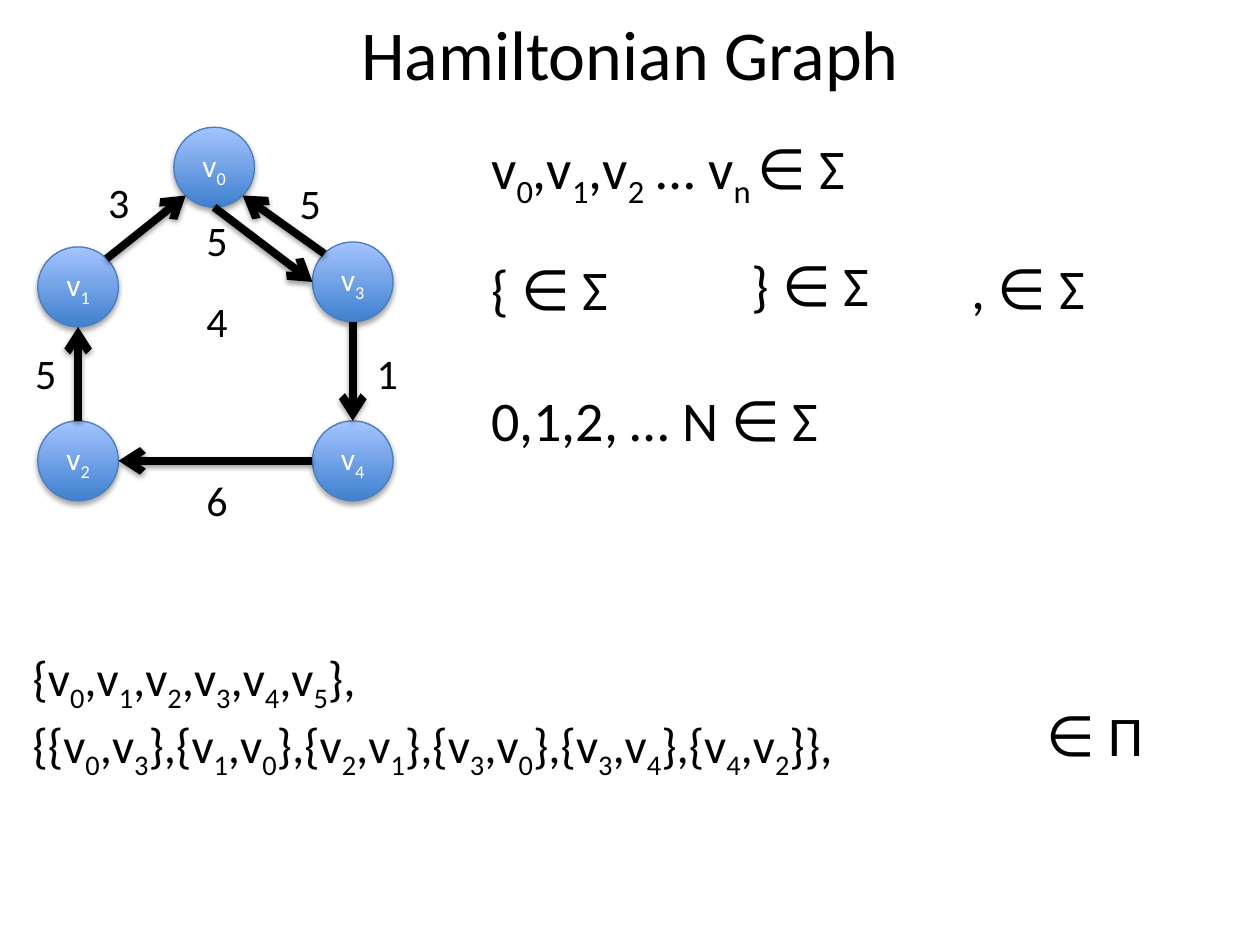
"""Build the Hamiltonian Graph slide: a weighted directed graph and its alphabet."""
from dataclasses import dataclass
from math import cos, radians, sin

from lxml import etree
from pptx import Presentation
from pptx.dml.color import RGBColor
from pptx.enum.shapes import MSO_CONNECTOR, MSO_SHAPE
from pptx.enum.text import MSO_ANCHOR, MSO_AUTO_SIZE, PP_ALIGN
from pptx.oxml.ns import qn
from pptx.util import Inches, Pt

CENTER, LEFT = PP_ALIGN.CENTER, PP_ALIGN.LEFT
MIDDLE = MSO_ANCHOR.MIDDLE
FIT_SHAPE = MSO_AUTO_SIZE.SHAPE_TO_FIT_TEXT
OVAL = MSO_SHAPE.OVAL
STRAIGHT = MSO_CONNECTOR.STRAIGHT

BLACK = RGBColor(0x00, 0x00, 0x00)
WHITE = RGBColor(0xFF, 0xFF, 0xFF)
DEEP_BLUE = RGBColor(0x3F, 0x80, 0xCE)
PALE_BLUE = RGBColor(0xA4, 0xC4, 0xFF)
OUTLINE_BLUE = RGBColor(0x4B, 0x7E, 0xBC)

FONT = "Calibri"
NODE_WIDTH, NODE_HEIGHT = 0.64, 0.635
TOP, TOP_LEFT, SIDE_LEFT, BOTTOM_LEFT, BOTTOM, BOTTOM_RIGHT, SIDE_RIGHT, TOP_RIGHT = range(8)


@dataclass(frozen=True)
class Node:
    name: str
    left: float
    top: float

    def site(self, index: int) -> tuple[float, float]:
        angle = radians(90 + 45 * index)
        return (self.left + NODE_WIDTH / 2 * (1 + cos(angle)),
                self.top + NODE_HEIGHT / 2 * (1 - sin(angle)))


@dataclass(frozen=True)
class Edge:
    source: str
    source_site: int
    target: str
    target_site: int


@dataclass(frozen=True)
class Label:
    text: str
    left: float
    top: float
    width: float
    height: float = 0.64
    size: int = 32


NODES = (
    Node("1", 0.3, 1.96),
    Node("0", 1.38, 1.01),
    Node("2", 0.3, 3.34),
    Node("3", 2.48, 1.92),
    Node("4", 2.48, 3.34),
)
EDGES = (
    Edge("0", BOTTOM, "3", SIDE_LEFT),
    Edge("3", BOTTOM, "4", TOP),
    Edge("3", TOP_LEFT, "0", BOTTOM_RIGHT),
    Edge("4", SIDE_LEFT, "2", SIDE_RIGHT),
    Edge("2", TOP, "1", BOTTOM),
    Edge("1", TOP_RIGHT, "0", BOTTOM_LEFT),
)
WEIGHTS = (
    ("3", 0.76, 1.35), ("5", 2.28, 1.36), ("4", 1.54, 2.3), ("5", 0.18, 2.71),
    ("1", 2.89, 2.71), ("6", 1.54, 3.72), ("5", 1.54, 1.65),
)


def braces(*members: str) -> str:
    return "{" + ",".join(members) + "}"


def vertices(indices: str) -> str:
    return braces(*(f"v_{index}_" for index in indices))


VERTEX_SET = vertices("012345")
EDGE_SET = braces(*map(vertices, ("03", "10", "21", "30", "34", "42")))
LABELS = (
    Label("v_0_,v_1_,v_2_ … v_n _∈ Σ", 3.8, 1.01, 3.56),
    Label("{ ∈ Σ", 3.8, 1.97, 1.2),
    Label("0,1,2, … N ∈ Σ", 3.8, 3.01, 3.19),
    Label("} ∈ Σ", 5.87, 1.94, 1.2),
    Label(", ∈ Σ", 7.61, 1.96, 1.2),
    Label(f"{VERTEX_SET},\n{EDGE_SET},", 0.16, 5.09, 7.45, 1.04, 28),
    Label("∈ Π", 8.21, 5.51, 0.97),
)


def write_text(frame, text: str, *, size: int, color: RGBColor = BLACK, align=LEFT) -> None:
    for number, line in enumerate(text.split("\n")):
        paragraph = frame.add_paragraph() if number else frame.paragraphs[0]
        paragraph.alignment = align
        for position, part in enumerate(line.split("_")):
            if not part:
                continue
            run = paragraph.add_run()
            run.text = part
            run.font.name = FONT
            run.font.size = Pt(size)
            run.font.color.rgb = color
            if position % 2:
                run._r.get_or_add_rPr().set("baseline", "-25000")


def add_shadow(properties, distance: float, opacity: int) -> None:
    effects = etree.SubElement(properties, qn("a:effectLst"))
    shadow = etree.SubElement(effects, qn("a:outerShdw"), blurRad=str(Pt(3.1)),
                              dist=str(Pt(distance)), dir="5400000", rotWithShape="0")
    color = etree.SubElement(shadow, qn("a:srgbClr"), val=str(BLACK))
    etree.SubElement(color, qn("a:alpha"), val=str(opacity * 1000))


def add_label(shapes, label: Label) -> None:
    box = shapes.add_textbox(Inches(label.left), Inches(label.top),
                             Inches(label.width), Inches(label.height))
    box.text_frame.word_wrap = False
    box.text_frame.auto_size = FIT_SHAPE
    write_text(box.text_frame, label.text, size=label.size)


def add_node(shapes, node: Node):
    circle = shapes.add_shape(OVAL, Inches(node.left), Inches(node.top),
                              Inches(NODE_WIDTH), Inches(NODE_HEIGHT))
    circle.fill.gradient()
    circle.fill.gradient_angle = 90
    for stop, color in zip(circle.fill.gradient_stops, (DEEP_BLUE, PALE_BLUE)):
        stop.color.rgb = color
    circle.line.color.rgb = OUTLINE_BLUE
    circle.line.width = Pt(0.75)
    add_shadow(circle._element.spPr, 1.8, 35)
    circle.text_frame.vertical_anchor = MIDDLE
    write_text(circle.text_frame, f"v_{node.name}_", size=18, color=WHITE, align=CENTER)
    return circle


def add_edge(shapes, edge: Edge, nodes: dict, circles: dict) -> None:
    start = nodes[edge.source].site(edge.source_site)
    end = nodes[edge.target].site(edge.target_site)
    arrow = shapes.add_connector(STRAIGHT, *map(Inches, start + end))
    arrow.line.color.rgb = BLACK
    arrow.line.width = Pt(4.5)
    etree.SubElement(arrow.line._get_or_add_ln(), qn("a:tailEnd"), type="arrow")
    add_shadow(arrow._element.spPr, 1.6, 38)
    joints = arrow._element.nvCxnSpPr.cNvCxnSpPr
    for tag, name, site in (("a:stCxn", edge.source, edge.source_site),
                            ("a:endCxn", edge.target, edge.target_site)):
        etree.SubElement(joints, qn(tag), id=str(circles[name].shape_id), idx=str(site))


def main() -> None:
    deck = Presentation()
    deck.slide_width, deck.slide_height = Inches(10), Inches(7.5)
    slide = deck.slides.add_slide(deck.slide_layouts[5])
    shapes = slide.shapes

    title = shapes.title
    title.left, title.top = Inches(0.5), Inches(0.06)
    title.width, title.height = Inches(9), Inches(0.71)
    title.text_frame.vertical_anchor = MIDDLE
    write_text(title.text_frame, "Hamiltonian Graph", size=40, align=CENTER)

    for label in LABELS:
        add_label(shapes, label)
    nodes = {node.name: node for node in NODES}
    circles = {node.name: add_node(shapes, node) for node in NODES}
    for weight, left, top in WEIGHTS:
        add_label(shapes, Label(weight, left, top, 0.39, 0.5, 24))
    for edge in EDGES:
        add_edge(shapes, edge, nodes, circles)

    deck.save("out.pptx")


if __name__ == "__main__":
    main()
